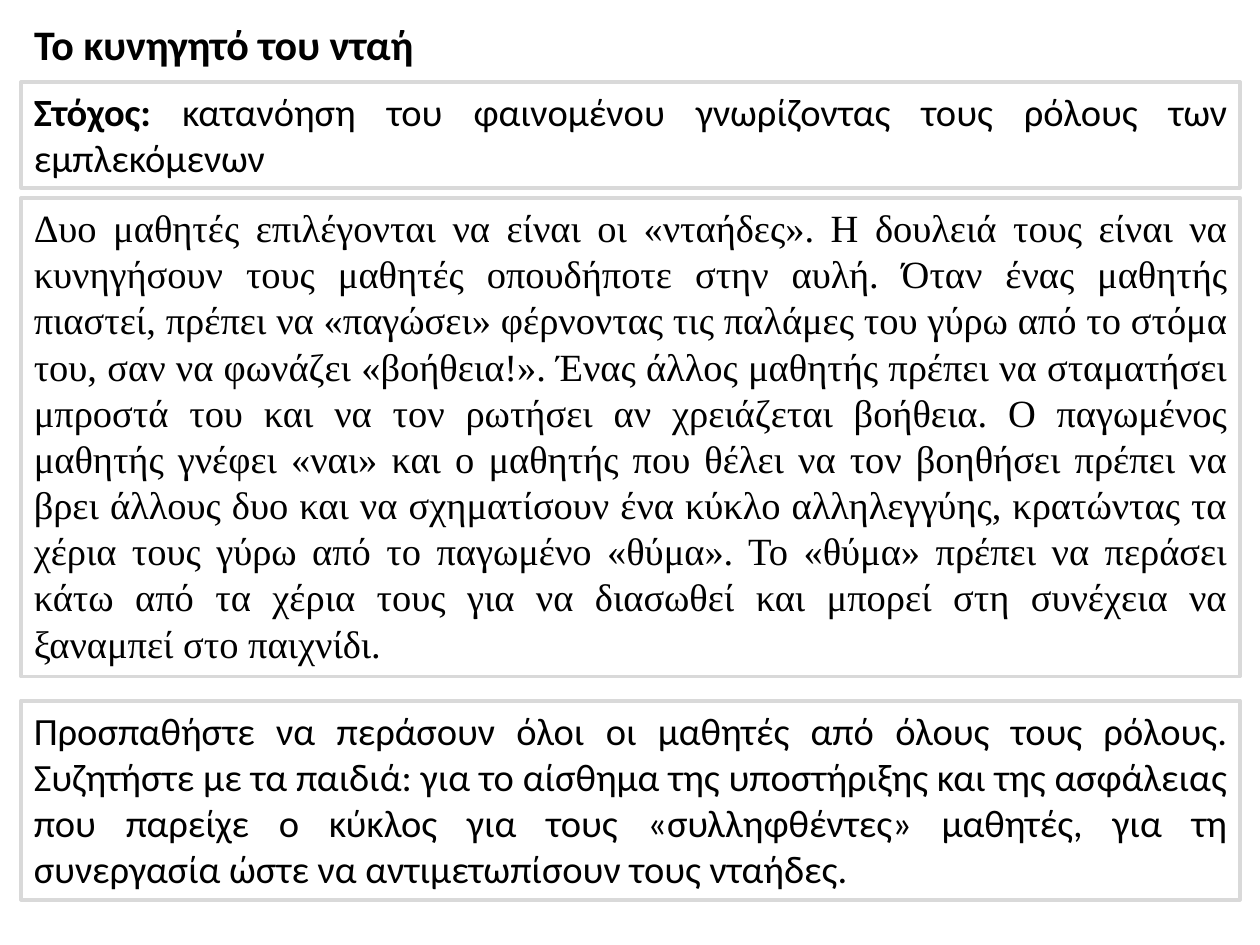
import pptx
import pptx.dml.color
import pptx.enum.text
import pptx.util
from pptx.util import Inches

LEFT = 0.17
FULL_WIDTH = 9.67
GOAL = [
    ("Στόχος: ", True),
    ("κατανόηση του φαινομένου γνωρίζοντας τους ρόλους των εμπλεκόμενων", False),
]
GAME = (
    "Δυο μαθητές επιλέγονται να είναι οι «νταήδες». Η δουλειά τους είναι να "
    "κυνηγήσουν τους μαθητές οπουδήποτε στην αυλή. Όταν ένας μαθητής πιαστεί, "
    "πρέπει να «παγώσει» φέρνοντας τις παλάμες του γύρω από το στόμα του, σαν να "
    "φωνάζει «βοήθεια!». Ένας άλλος μαθητής πρέπει να σταματήσει μπροστά του και να "
    "τον ρωτήσει αν χρειάζεται βοήθεια. Ο παγωμένος μαθητής γνέφει «ναι» και ο "
    "μαθητής που θέλει να τον βοηθήσει πρέπει να βρει άλλους δυο και να σχηματίσουν "
    "ένα κύκλο αλληλεγγύης, κρατώντας τα χέρια τους γύρω από το παγωμένο «θύμα». Το "
    "«θύμα» πρέπει να περάσει κάτω από τα χέρια τους για να διασωθεί και μπορεί στη "
    "συνέχεια να ξαναμπεί στο παιχνίδι."
)
DISCUSSION = (
    "Προσπαθήστε να περάσουν όλοι οι μαθητές από όλους τους ρόλους. Συζητήστε με τα "
    "παιδιά: για το αίσθημα της υποστήριξης και της ασφάλειας που παρείχε ο κύκλος "
    "για τους «συλληφθέντες» μαθητές, για τη συνεργασία ώστε να αντιμετωπίσουν τους "
    "νταήδες."
)


def color(value):
    return pptx.dml.color.RGBColor.from_string(value)


class GamePage:
    ink = "000000"
    paper = "FFFFFF"
    border = "D9D9D9"
    border_width = 2.25
    font = "Calibri"
    text_size = 22
    title_size = 24

    def __init__(self, deck):
        self.page = deck.slides.add_slide(deck.slide_layouts[5])

    def fill_text(self, box, spans, size, font):
        """Fill a box with one justified paragraph of (text, bold) spans."""
        frame = box.text_frame
        frame.word_wrap = True
        frame.auto_size = pptx.enum.text.MSO_AUTO_SIZE.SHAPE_TO_FIT_TEXT
        frame.vertical_anchor = pptx.enum.text.MSO_ANCHOR.TOP
        paragraph = frame.paragraphs[0]
        paragraph.alignment = pptx.enum.text.PP_ALIGN.JUSTIFY
        for text, bold in spans:
            span = paragraph.add_run()
            span.text = text
            span.font.name = font
            span.font.size = pptx.util.Pt(size)
            span.font.bold = bold
            span.font.color.rgb = color(self.ink)

    def outline(self, box, line):
        box.line.color.rgb = color(line)
        box.line.width = pptx.util.Pt(self.border_width)

    def title(self, text, top, width, height):
        box = self.page.shapes.title
        box.left, box.top = Inches(LEFT), Inches(top)
        box.width, box.height = Inches(width), Inches(height)
        self.outline(box, self.paper)
        self.fill_text(box, [(text, True)], self.title_size, self.font)

    def panel(self, spans, top, height, font=None, fill=None):
        box = self.page.shapes.add_textbox(
            Inches(LEFT), Inches(top), Inches(FULL_WIDTH), Inches(height)
        )
        if fill:
            box.fill.solid()
            box.fill.fore_color.rgb = color(fill)
        self.outline(box, self.border)
        self.fill_text(box, spans, self.text_size, font or self.font)


def main():
    deck = pptx.Presentation()
    deck.slide_width, deck.slide_height = Inches(10), Inches(7.5)
    game = GamePage(deck)
    game.title("Το κυνηγητό του νταή", 0.1, 3.39, 0.5)
    game.panel([(GAME, False)], 1.57, 3.8, font="Times New Roman")
    game.panel([(DISCUSSION, False)], 5.56, 1.58, fill=game.paper)
    game.panel(GOAL, 0.65, 0.84)
    deck.save("out.pptx")


if __name__ == "__main__":
    main()
